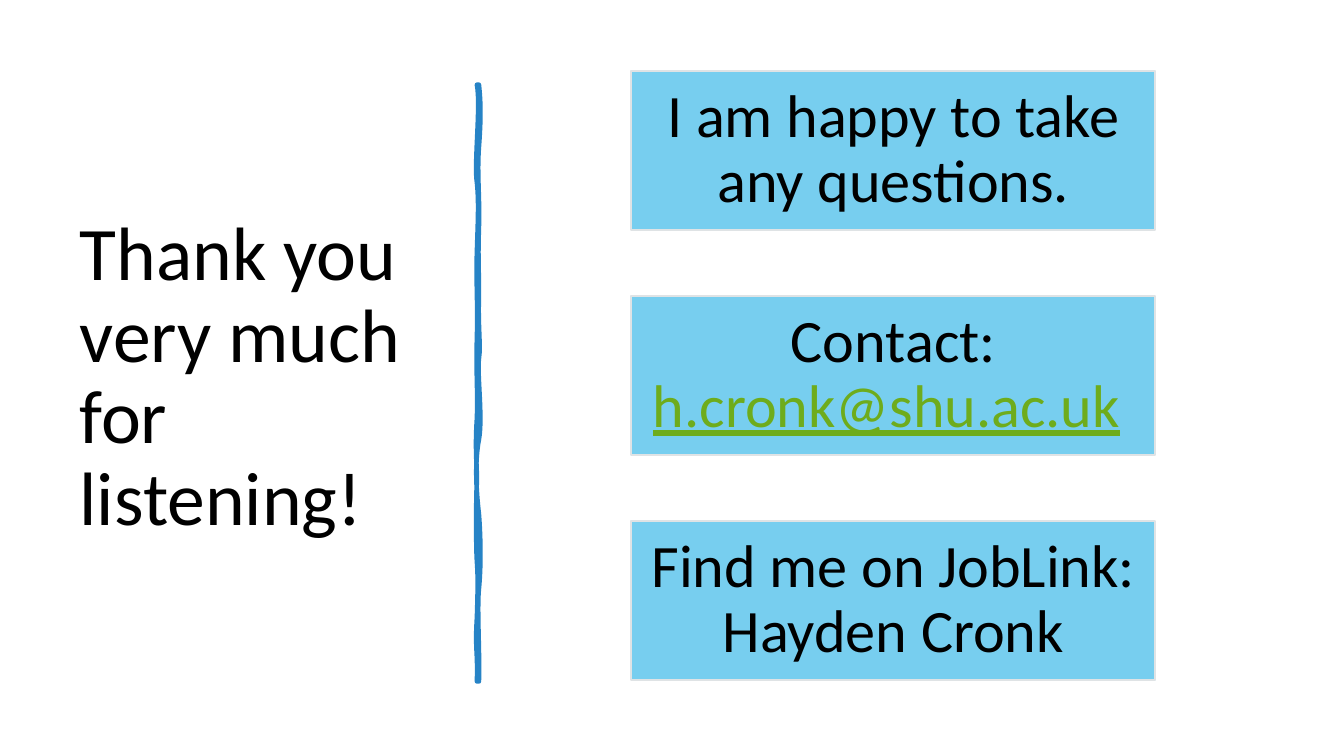
import pptx
import pptx.dml.color
import pptx.enum.shapes
import pptx.enum.text
import pptx.oxml.ns
import pptx.util
from lxml import etree

Inches, Pt, qn = pptx.util.Inches, pptx.util.Pt, pptx.oxml.ns.qn
ALIGN = pptx.enum.text.PP_ALIGN

THEME = {
    "font": "Calibri",
    "title_size": 54,
    "card_size": 43,
    "text": "000000",
    "email": "6EAC1C",
    "card": "77CEEF",
    "card_line": "DFE3E5",
    "stroke": "2683C6",
}

TITLE = "Thank you very much for listening!"
# Each card is a list of (text, run format) pairs.
CARDS = [
    [("I am happy to take any questions.", {})],
    [("Contact: ", {}),
     ("h.cronk@shu.ac.uk", {"color": THEME["email"], "underline": True}),
     (" ", {})],
    [("Find me on JobLink: Hayden Cronk", {})],
]

TITLE_BOX = (0.69, 0.7, 3.74, 6.11)
CARD_LEFT, CARD_TOP, CARD_W, CARD_H = 6.26, 0.7, 5.2, 1.58
CARD_BOTTOM = 6.75

# Hand-drawn divider: a start point, then cubic curves (control, control, end).
DIVIDER_START = (4.75, 0.84)
DIVIDER_CURVES = [
    ((4.77, 1.02), (4.77, 1.19), (4.75, 1.46)),
    ((4.73, 1.73), (4.76, 1.95), (4.75, 2.26)),
    ((4.74, 2.57), (4.75, 2.62), (4.75, 2.94)),
    ((4.74, 3.25), (4.77, 3.42), (4.75, 3.56)),
    ((4.73, 3.70), (4.79, 4.14), (4.75, 4.36)),
    ((4.71, 4.57), (4.72, 4.84), (4.75, 5.10)),
    ((4.77, 5.36), (4.77, 5.64), (4.75, 5.84)),
    ((4.73, 6.03), (4.76, 6.50), (4.75, 6.76)),
    ((4.74, 6.76), (4.73, 6.76), (4.73, 6.76)),
    ((4.74, 6.46), (4.71, 6.44), (4.73, 6.13)),
    ((4.74, 5.83), (4.74, 5.70), (4.73, 5.57)),
    ((4.72, 5.44), (4.72, 4.95), (4.73, 4.77)),
    ((4.73, 4.59), (4.71, 4.45), (4.73, 4.15)),
    ((4.74, 3.86), (4.72, 3.73), (4.73, 3.35)),
    ((4.74, 2.98), (4.72, 2.81), (4.73, 2.50)),
    ((4.74, 2.18), (4.75, 2.00), (4.73, 1.81)),
    ((4.70, 1.63), (4.77, 1.04), (4.73, 0.84)),
]


def rgb(value):
    return pptx.dml.color.RGBColor.from_string(value)


def add_run(p, text, size, color=THEME["text"], underline=False):
    r = p.add_run()
    r.text = text
    r.font.name = THEME["font"]
    r.font.size = Pt(size)
    r.font.color.rgb = rgb(color)
    r.font.underline = underline


def write(sp, runs, size, align, margins=(0.1, 0.05)):
    """Fill a shape with one vertically centred paragraph."""
    tf = sp.text_frame
    tf.word_wrap = True
    tf.auto_size = pptx.enum.text.MSO_AUTO_SIZE.NONE
    tf.vertical_anchor = pptx.enum.text.MSO_ANCHOR.MIDDLE
    tf.margin_left = tf.margin_right = Inches(margins[0])
    tf.margin_top = tf.margin_bottom = Inches(margins[1])
    p = tf.paragraphs[0]
    p.alignment = align
    p.line_spacing = 0.9
    for text, style in runs:
        add_run(p, text, size, **style)


def paint(sp, fill, line, width):
    sp.shadow.inherit = False
    sp.fill.solid()
    sp.fill.fore_color.rgb = rgb(fill)
    sp.line.color.rgb = rgb(line)
    sp.line.width = Pt(width)


def bend_segments(sp, curves):
    """Turn each straight segment of a freeform into its cubic curve."""
    segments = list(sp.element.iter(qn("a:lnTo")))
    for segment, curve in zip(segments, curves):
        bezier = etree.Element(qn("a:cubicBezTo"))
        for x, y in curve:
            etree.SubElement(bezier, qn("a:pt"), x=str(Inches(x) - sp.left),
                             y=str(Inches(y) - sp.top))
        segment.getparent().replace(segment, bezier)


def add_divider(s):
    builder = s.shapes.build_freeform(*map(Inches, DIVIDER_START))
    ends = [tuple(map(Inches, end)) for _, _, end in DIVIDER_CURVES]
    builder.add_line_segments(ends, close=True)
    sp = builder.convert_to_shape()
    bend_segments(sp, DIVIDER_CURVES)
    paint(sp, THEME["stroke"], THEME["stroke"], 3.25)
    etree.SubElement(sp.element.spPr.find(qn("a:ln")), qn("a:round"))


def add_cards(s):
    pitch = (CARD_BOTTOM - CARD_TOP - CARD_H) / (len(CARDS) - 1)
    for i, runs in enumerate(CARDS):
        sp = s.shapes.add_shape(
            pptx.enum.shapes.MSO_SHAPE.RECTANGLE, Inches(CARD_LEFT),
            Inches(CARD_TOP + i * pitch), Inches(CARD_W), Inches(CARD_H))
        paint(sp, THEME["card"], THEME["card_line"], 1.5)
        write(sp, runs, THEME["card_size"], ALIGN.CENTER, margins=(0.03, 0.03))


def main():
    prs = pptx.Presentation()
    prs.slide_width, prs.slide_height = Inches(13.33), Inches(7.5)
    s = prs.slides.add_slide(prs.slide_layouts[5])
    title = s.shapes.title
    title.left, title.top, title.width, title.height = map(Inches, TITLE_BOX)
    write(title, [(TITLE, {})], THEME["title_size"], ALIGN.LEFT)
    add_divider(s)
    add_cards(s)
    prs.save("out.pptx")


if __name__ == "__main__":
    main()
